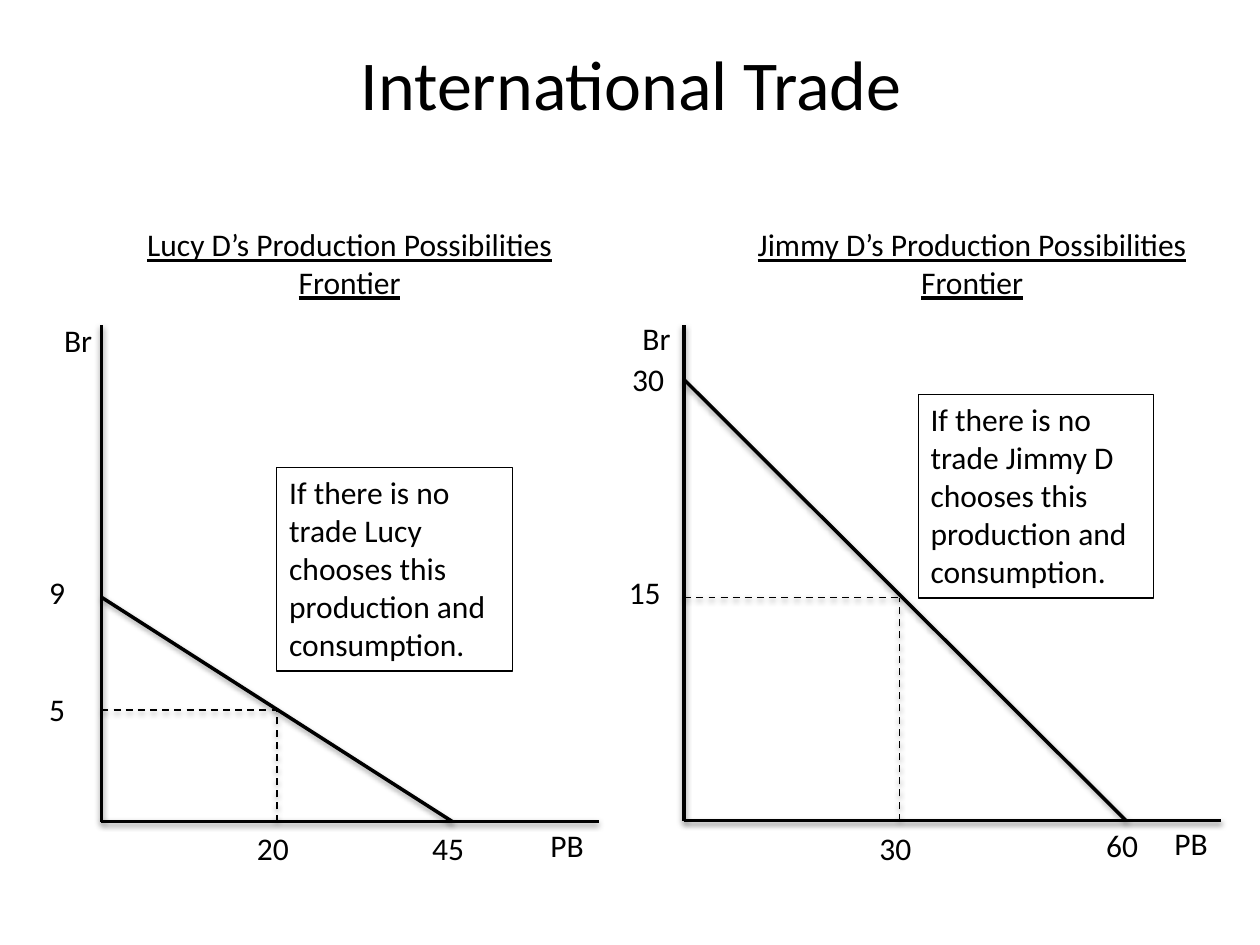
from dataclasses import dataclass

from lxml.etree import SubElement
from pptx import Presentation
from pptx.dml.color import RGBColor
from pptx.enum.dml import MSO_LINE_DASH_STYLE as Dash
from pptx.enum.shapes import MSO_CONNECTOR as Connector
from pptx.enum.text import MSO_ANCHOR as Anchor, PP_ALIGN as Align
from pptx.oxml.ns import qn
from pptx.util import Pt


@dataclass(frozen=True)
class Theme:
    ink: RGBColor = RGBColor(0, 0, 0)
    font: str = "Calibri"
    title_size: float = 40
    body_size: float = 18
    axis_width: float = 2
    guide_width: float = 1
    border_width: float = 0.75


@dataclass(frozen=True)
class Frontier:
    heading: str
    heading_left: float
    origin: tuple
    axis_top: float
    axis_right: float
    intercept_y: float
    intercept_x: float
    choice: tuple
    labels: tuple
    note: str
    note_position: tuple


THEME = Theme()

LUCY = Frontier(
    heading="Lucy D’s Production Possibilities Frontier",
    heading_left=58.3,
    origin=(58, 469.5), axis_top=186, axis_right=342,
    intercept_y=341.3, intercept_x=258.5, choice=(158.4, 405.8),
    labels=(("Br", 29.5, 180), ("9", 21, 324), ("5", 21, 391),
            ("20", 139.7, 470), ("45", 239.8, 470), ("PB", 307.4, 468.5)),
    note="If there is no trade Lucy chooses this production and consumption.",
    note_position=(158.2, 267),
)

JIMMY = Frontier(
    heading="Jimmy D’s Production Possibilities Frontier",
    heading_left=414,
    origin=(391, 469), axis_top=186, axis_right=697.7,
    intercept_y=217, intercept_x=643.5, choice=(514, 341.5),
    labels=(("Br", 360, 179), ("30", 354.2, 202.3), ("15", 352.2, 324),
            ("30", 495.4, 470), ("60", 625, 468.3), ("PB", 664, 467.3)),
    note="If there is no trade Jimmy D chooses this production and consumption.",
    note_position=(524.7, 225.3),
)


def format_text(shape, text, size, align=Align.LEFT, underline=None):
    shape.text_frame.word_wrap = True
    paragraph = shape.text_frame.paragraphs[0]
    paragraph.text = text
    paragraph.alignment = align
    font = paragraph.font
    font.name, font.size, font.underline = THEME.font, Pt(size), underline
    font.color.rgb = THEME.ink


def add_title(slide, text):
    title = slide.shapes.title
    title.left, title.top, title.width, title.height = Pt(36.7), Pt(2), Pt(648), Pt(90)
    title.text_frame.vertical_anchor = Anchor.MIDDLE
    format_text(title, text, THEME.title_size, Align.CENTER)


def add_text(slide, text, left, top, width, height, **style):
    box = slide.shapes.add_textbox(Pt(left), Pt(top), Pt(width), Pt(height))
    format_text(box, text, THEME.body_size, **style)
    return box


def add_note(slide, text, left, top):
    box = add_text(slide, text, left, top, 134.7, 116.5)
    box.line.color.rgb = THEME.ink
    box.line.width = Pt(THEME.border_width)


def add_shadow(connector):
    effects = SubElement(connector._element.spPr, qn("a:effectLst"))
    shadow = SubElement(effects, qn("a:outerShdw"), blurRad="40000", dist="20000",
                        dir="5400000", rotWithShape="0")
    color = SubElement(shadow, qn("a:srgbClr"), val=str(THEME.ink))
    SubElement(color, qn("a:alpha"), val="38000")


def add_line(slide, start, end, width=THEME.axis_width, dash=None):
    connector = slide.shapes.add_connector(
        Connector.STRAIGHT, *(Pt(value) for value in (*start, *end)))
    connector.line.color.rgb = THEME.ink
    connector.line.width = Pt(width)
    connector.line.dash_style = dash
    add_shadow(connector)


def add_frontier(slide, frontier):
    x, y = frontier.origin
    choice_x, choice_y = frontier.choice
    add_line(slide, (x, frontier.axis_top), (x, y))
    add_line(slide, (x, y), (frontier.axis_right, y))
    add_line(slide, (x, frontier.intercept_y), (frontier.intercept_x, y))
    for foot in ((x, choice_y), (choice_x, y)):
        add_line(slide, foot, frontier.choice, THEME.guide_width, Dash.DASH)
    add_text(slide, frontier.heading, frontier.heading_left, 125.3, 283, 51,
             align=Align.CENTER, underline=True)
    for text, left, top in frontier.labels:
        add_text(slide, text, left, top, 40, 30)
    add_note(slide, frontier.note, *frontier.note_position)


def main():
    presentation = Presentation()
    presentation.slide_width, presentation.slide_height = Pt(720), Pt(540)
    slide = presentation.slides.add_slide(
        presentation.slide_layouts.get_by_name("Title Only"))
    add_title(slide, "International Trade")
    for frontier in (LUCY, JIMMY):
        add_frontier(slide, frontier)
    presentation.save("out.pptx")


if __name__ == "__main__":
    main()
